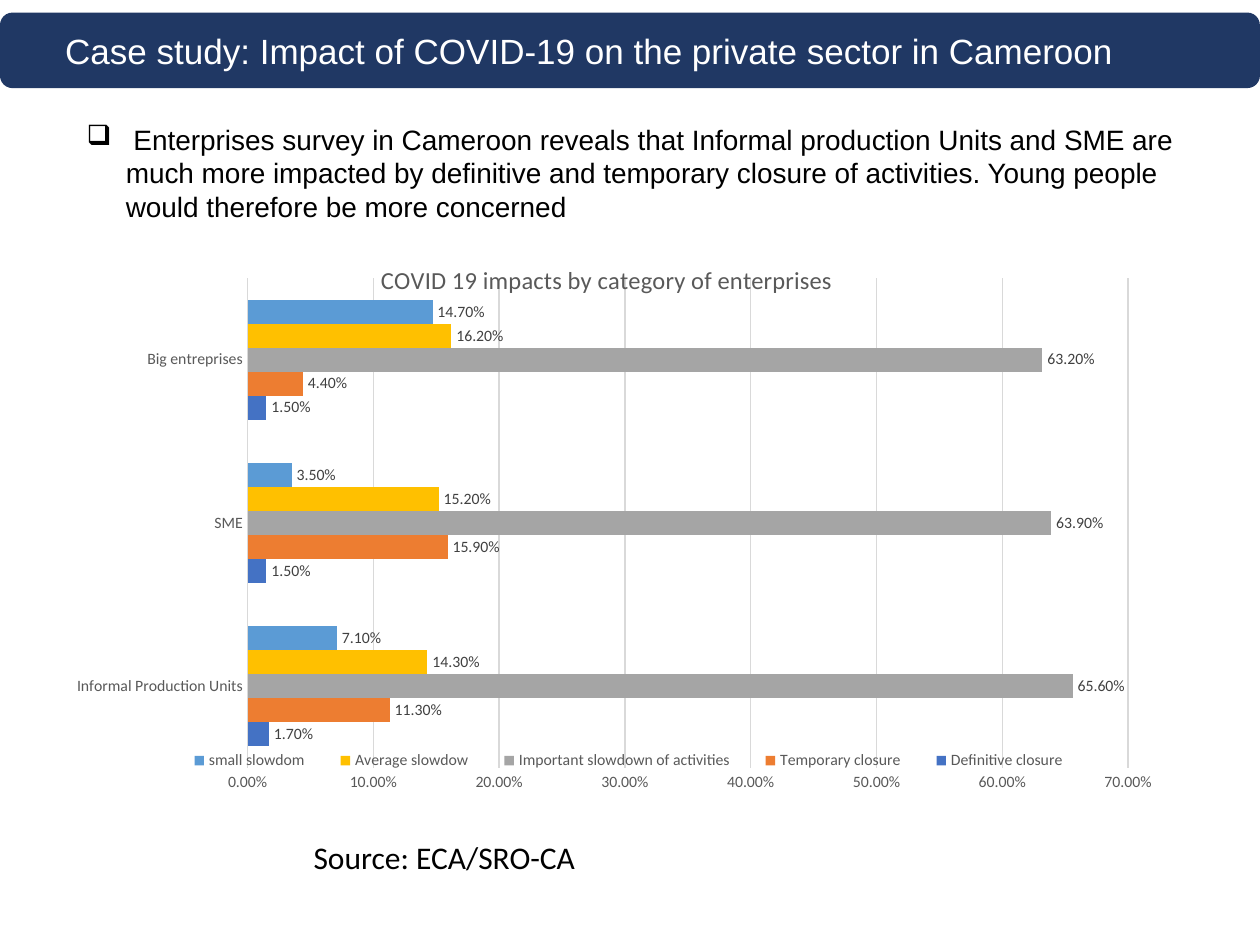
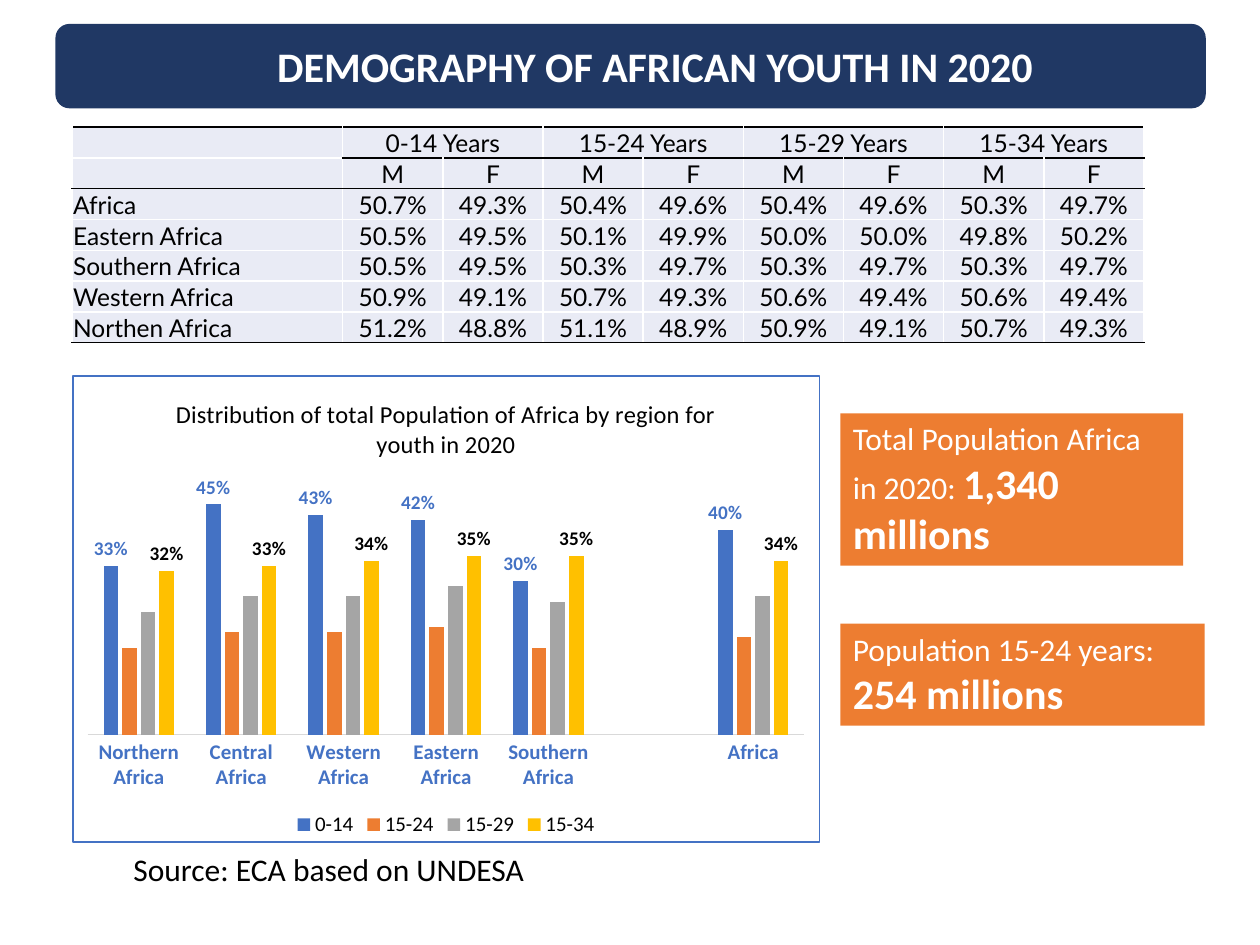
from lxml.etree import SubElement
from pptx import Presentation
from pptx.chart.data import CategoryChartData
from pptx.dml.color import RGBColor
from pptx.enum.chart import XL_CHART_TYPE, XL_LABEL_POSITION, XL_LEGEND_POSITION, XL_TICK_LABEL_POSITION, XL_TICK_MARK
from pptx.enum.shapes import MSO_SHAPE
from pptx.enum.text import MSO_ANCHOR, MSO_AUTO_SIZE, PP_ALIGN
from pptx.oxml import parse_xml
from pptx.oxml.ns import nsdecls, qn
from pptx.util import Emu, Inches, Pt

NAVY, BLUE, ORANGE, GRAY, GOLD, SKY = "203864", "4472C4", "ED7D31", "A5A5A5", "FFC000", "5B9BD5"
BLACK, WHITE, TEXT_GRAY, LABEL_GRAY, RULE_GRAY, TABLE_FILL = "000000", "FFFFFF", "595959", "404040", "D9D9D9", "E9EBF5"
BODY_FONT = "Calibri"
GRID_COLUMNS, GRID_ROWS = 100, 75


def color(hex_string):
    return RGBColor.from_string(hex_string)


def set_font(font, size, hex_color, bold=False, name=BODY_FONT):
    font.size, font.bold, font.name = Pt(size), bold, name
    font.color.rgb = color(hex_color)


def set_border(cell, side, hex_color):
    line = SubElement(cell._tc.get_or_add_tcPr(), qn(f"a:ln{side}"), w=str(Pt(1)))
    SubElement(SubElement(line, qn("a:solidFill")), qn("a:srgbClr"), val=hex_color)


def set_layout(element, inner=False, **shares):
    for layout in element.xpath("c:layout"):
        element.remove(layout)
    layout = parse_xml(f"<c:layout {nsdecls('c')}><c:manualLayout/></c:layout>")
    manual = layout[0]
    if inner:
        SubElement(manual, qn("c:layoutTarget"), val="inner")
    for key in ("x", "y"):
        SubElement(manual, qn(f"c:{key}Mode"), val="edge")
    for key, share in shares.items():
        SubElement(manual, qn(f"c:{key}"), val=str(share))
    overlay = element.find(qn("c:overlay"))
    if overlay is None:
        element.insert(0, layout)
    else:
        overlay.addprevious(layout)


class Deck:
    def __init__(self):
        self.presentation = Presentation()
        self.presentation.slide_width, self.presentation.slide_height = Inches(10), Inches(7.5)
        self.slide = None

    def add_slide(self):
        self.slide = self.presentation.slides.add_slide(self.presentation.slide_layouts[6])

    def place(self, column, row, columns, rows):
        cell_width = self.presentation.slide_width / GRID_COLUMNS
        cell_height = self.presentation.slide_height / GRID_ROWS
        return [Emu(round(length)) for length in
                (column * cell_width, row * cell_height, columns * cell_width, rows * cell_height)]

    def filled_shape(self, kind, area, fill):
        shape = self.slide.shapes.add_shape(kind, *self.place(*area))
        shape.shadow.inherit = False
        shape.fill.solid()
        shape.fill.fore_color.rgb = color(fill)
        shape.line.fill.background()
        shape.text_frame.word_wrap = True
        return shape

    def title_band(self, area, text, size, font_name=BODY_FONT, bold=False, alignment=PP_ALIGN.LEFT):
        frame = self.filled_shape(MSO_SHAPE.ROUNDED_RECTANGLE, area, NAVY).text_frame
        frame.margin_left = frame.margin_right = frame.margin_top = frame.margin_bottom = Inches(0.1)
        frame.vertical_anchor = MSO_ANCHOR.MIDDLE
        paragraph = frame.paragraphs[0]
        paragraph.text, paragraph.alignment = text, alignment
        paragraph._p.get_or_add_pPr().set("marL", str(Inches(0.39)))
        set_font(paragraph.font, size, WHITE, bold, font_name)

    def callout(self, area, label, figure):
        frame = self.filled_shape(MSO_SHAPE.RECTANGLE, area, ORANGE).text_frame
        frame.vertical_anchor = MSO_ANCHOR.TOP
        frame.auto_size = MSO_AUTO_SIZE.SHAPE_TO_FIT_TEXT
        paragraph = frame.paragraphs[0]
        paragraph.alignment = PP_ALIGN.LEFT
        for text, size, bold in ((label, 18, False), (figure, 24, True)):
            run = paragraph.add_run()
            run.text = text
            set_font(run.font, size, WHITE, bold)

    def text(self, area, text, size, font_name=BODY_FONT, bullet=None):
        frame = self.slide.shapes.add_textbox(*self.place(*area)).text_frame
        frame.word_wrap = True
        frame.auto_size = MSO_AUTO_SIZE.SHAPE_TO_FIT_TEXT
        paragraph = frame.paragraphs[0]
        paragraph.text = text
        if bullet:
            properties = paragraph._p.get_or_add_pPr()
            properties.set("marL", str(Inches(0.31)))
            properties.set("indent", str(-Inches(0.31)))
            SubElement(properties, qn("a:buChar"), char=bullet)
        set_font(paragraph.font, size, BLACK, name=font_name)

    def table(self, area, first_width, rows):
        row_count, column_count = len(rows), len(rows[0])
        table = self.slide.shapes.add_table(row_count, column_count, *self.place(*area)).table
        table.first_row = table.horz_banding = False
        left, top, width, height = self.place(*area)
        label_width = self.place(0, 0, first_width, 0)[2]
        for index, column in enumerate(table.columns):
            column.width = Emu((width - label_width) // (column_count - 1)) if index else label_width
        for row_index, row in enumerate(rows):
            table.rows[row_index].height = Emu(height // row_count)
            for column_index, text in enumerate(row):
                self.table_cell(table.cell(row_index, column_index), text, row_index, column_index, row_count)
        for column_index in range(1, column_count, 2):
            table.cell(0, column_index).merge(table.cell(0, column_index + 1))

    def table_cell(self, cell, text, row, column, row_count):
        cell.margin_left = cell.margin_right = cell.margin_top = Inches(0.01)
        cell.margin_bottom = 0
        cell.vertical_anchor = MSO_ANCHOR.BOTTOM
        paragraph = cell.text_frame.paragraphs[0]
        paragraph.text = text
        paragraph.alignment = PP_ALIGN.CENTER if column else PP_ALIGN.LEFT
        set_font(paragraph.font, 14, BLACK, name="Lato")
        black_edges = {0, 2, row_count} | ({1} if column else set())
        for side, edge in (("L", None), ("R", None), ("T", row), ("B", row + 1)):
            set_border(cell, side, BLACK if edge in black_edges else WHITE)
        cell.fill.solid()
        cell.fill.fore_color.rgb = color(TABLE_FILL)

    def chart(self, kind, area, title, title_color, categories, series_list, number_format, gap, overlap,
              plot_share, legend_font, label_size):
        data = CategoryChartData(number_format=number_format)
        data.categories = categories
        for name, values, *style in series_list:
            data.add_series(name, values)
        chart = self.slide.shapes.add_chart(kind, *self.place(*area), data).chart
        set_font(chart.font, 10, BLACK)
        chart.has_title = True
        paragraph = chart.chart_title.text_frame.paragraphs[0]
        paragraph.text = title
        set_font(paragraph.font, 14, title_color)
        chart.has_legend = True
        chart.legend.position = XL_LEGEND_POSITION.BOTTOM
        chart.legend.include_in_layout = False
        set_font(chart.legend.font, *legend_font)
        plot = chart.plots[0]
        plot.gap_width, plot.overlap, plot.vary_by_categories = gap, overlap, False
        for series, (name, values, fill, label_color, bold) in zip(plot.series, series_list):
            series.format.fill.solid()
            series.format.fill.fore_color.rgb = color(fill)
            if label_color:
                labels = series.data_labels
                labels.show_value = True
                labels.number_format, labels.number_format_is_linked = number_format, False
                labels.position = XL_LABEL_POSITION.OUTSIDE_END
                set_font(labels.font, label_size, label_color, bold)
        for axis in (chart.category_axis, chart.value_axis):
            axis.major_tick_mark = axis.minor_tick_mark = XL_TICK_MARK.NONE
            axis.has_major_gridlines = False
        chart.category_axis.format.line.color.rgb = color(RULE_GRAY)
        chart.category_axis.format.line.width = Pt(0.75)
        chart.value_axis.minimum_scale, chart.value_axis.major_unit = 0, 0.1
        set_layout(chart.element.xpath("c:chart/c:plotArea")[0], inner=True, **plot_share)
        return chart

    def chart_area(self, chart, fill=None, border=None):
        properties = parse_xml(f"<c:spPr {nsdecls('c', 'a')}/>")
        line = parse_xml(f"<a:ln {nsdecls('a')} w=\"{Pt(1)}\"/>")
        for parent, hex_color in ((properties, fill), (line, border)):
            if hex_color:
                SubElement(SubElement(parent, qn("a:solidFill")), qn("a:srgbClr"), val=hex_color)
            else:
                SubElement(parent, qn("a:noFill"))
        properties.append(line)
        chart.element.xpath("c:chart")[0].addnext(properties)


def build_survey_slide(deck):
    deck.add_slide()
    deck.title_band((0, 1, 100, 6), "Case study: Impact of COVID-19 on the private sector in Cameroon", 20, "Arial")
    deck.text((5.9, 9.2, 90.6, 10.3),
              " Enterprises survey in Cameroon reveals that Informal production Units and SME are much more impacted "
              "by definitive and temporary closure of activities. Young people would therefore be more concerned",
              16, "Arial", "❑")
    impacts = [
        ("Definitive closure", (0.017, 0.015, 0.015), BLUE),
        ("Temporary closure", (0.113, 0.159, 0.044), ORANGE),
        ("Important slowdown of activities", (0.656, 0.639, 0.632), GRAY),
        ("Average slowdow", (0.143, 0.152, 0.162), GOLD),
        ("small slowdom", (0.071, 0.035, 0.147), SKY),
    ]
    chart = deck.chart(
        XL_CHART_TYPE.BAR_CLUSTERED, (4.1, 18.6, 88.9, 48.3),
        "COVID 19 impacts by category of enterprises", TEXT_GRAY,
        ("Informal Production Units", "SME", "Big entreprises"),
        [(*impact, LABEL_GRAY, False) for impact in impacts], "0.00%", 182, 0,
        {"x": 0.175, "y": 0.072, "w": 0.786, "h": 0.805}, (9, TEXT_GRAY), 9)
    value_axis = chart.value_axis
    value_axis.maximum_scale = 0.7
    value_axis.has_major_gridlines = True
    value_axis.major_gridlines.format.line.color.rgb = color(RULE_GRAY)
    value_axis.major_gridlines.format.line.width = Pt(0.75)
    value_axis.format.line.fill.background()
    for axis in (chart.category_axis, value_axis):
        set_font(axis.tick_labels.font, 9, TEXT_GRAY)
    set_layout(chart.chart_title.element if hasattr(chart.chart_title, "element")
               else chart.element.xpath("c:chart/c:title")[0], x=0.29, y=0.04)
    set_layout(chart.element.xpath("c:chart/c:legend")[0], x=0.1, y=0.84, w=0.83, h=0.05)
    deck.chart_area(chart)
    deck.text((23.9, 66, 29.5, 4), "Source: ECA/SRO-CA", 18)


def build_demography_slide(deck):
    deck.add_slide()
    deck.title_band((4.4, 1.9, 91.3, 6.7), "DEMOGRAPHY OF AFRICAN YOUTH IN 2020", 24,
                    bold=True, alignment=PP_ALIGN.CENTER)
    male_shares = {
        "Africa": (50.7, 50.4, 50.4, 50.3),
        "Eastern Africa": (50.5, 50.1, 50.0, 49.8),
        "Southern Africa": (50.5, 50.3, 50.3, 50.3),
        "Western Africa": (50.9, 50.7, 50.6, 50.6),
        "Northen Africa": (51.2, 51.1, 50.9, 50.7),
    }
    age_groups = ("0-14", "15-24", "15-29", "15-34")
    rows = [[""] + [text for ages in age_groups for text in (f"{ages} Years", "")], [""] + ["M", "F"] * 4]
    rows += [[region] + [f"{share:.1f}%" for male in shares for share in (male, 100 - male)]
             for region, shares in male_shares.items()]
    deck.table((5.7, 10.1, 85.1, 17.1), 21.5, rows)
    deck.text((9.6, 67, 46.2, 4), "Source: ECA based on UNDESA", 18)
    deck.callout((66.7, 32.8, 27.2, 12.1), "Total Population Africa in 2020: ", "1,340 millions")
    population_shares = (
        (0.33, 0.45, 0.43, 0.42, 0.3, None, 0.4),
        (0.17, 0.2, 0.2, 0.21, 0.17, None, 0.19),
        (0.24, 0.27, 0.27, 0.29, 0.26, None, 0.27),
        (0.32, 0.33, 0.34, 0.35, 0.35, None, 0.34),
    )
    fills, label_colors = (BLUE, ORANGE, GRAY, GOLD), (BLUE, None, None, BLACK)
    chart = deck.chart(
        XL_CHART_TYPE.COLUMN_CLUSTERED, (5.7, 29.8, 59.4, 37.1),
        "Distribution of total Population of Africa by region for youth in 2020", BLACK,
        ("Northern Africa", "Central Africa", "Western Africa", "Eastern Africa", "Southern Africa", "", "Africa"),
        [(*series, True) for series in zip(age_groups, population_shares, fills, label_colors)], "0%", 219, -27,
        {"x": 0.02, "y": 0.22, "w": 0.96, "h": 0.55}, (12, BLACK), 11)
    chart.value_axis.maximum_scale = 0.5
    chart.value_axis.visible = False
    chart.value_axis.tick_label_position = XL_TICK_LABEL_POSITION.NONE
    set_font(chart.category_axis.tick_labels.font, 12, BLUE, True)
    deck.chart_area(chart, WHITE, BLUE)
    deck.callout((66.7, 49.5, 28.9, 8.1), "Population 15-24 years: ", "254 millions")


def main():
    deck = Deck()
    build_survey_slide(deck)
    build_demography_slide(deck)
    deck.presentation.save("out.pptx")


if __name__ == "__main__":
    main()
